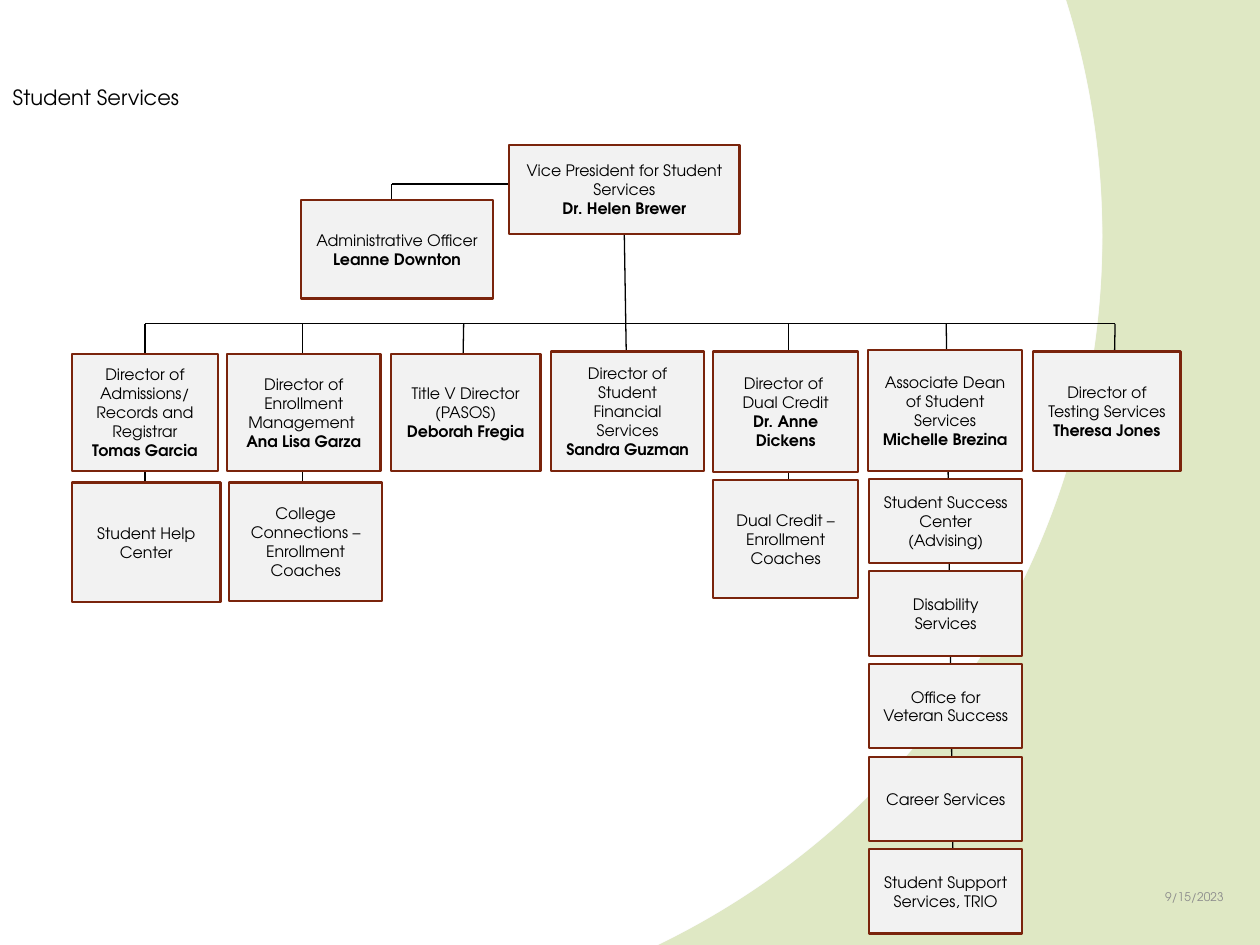
from pptx import Presentation
from pptx.dml.color import RGBColor
from pptx.enum.shapes import MSO_CONNECTOR as Connector, MSO_SHAPE as Shape
from pptx.enum.text import MSO_ANCHOR as Anchor, MSO_AUTO_SIZE as AutoSize, PP_ALIGN as Align
from pptx.oxml import parse_xml
from pptx.oxml.ns import nsdecls, qn
from pptx.util import Inches, Pt

FONT = "TeX Gyre Adventor"
BLACK, GREY, BOX_FILL, BOX_LINE = "000000", "8C8C8C", "F2F2F2", "7A240C"
BUS_Y = 2.57
UNIT_PITCH = 0.735

# line from the bus down behind the boxes; director's box; role; name;
# box of the first unit; units
DEPARTMENTS = [
    ((1.15, BUS_Y, 1.15, 4.38), (0.57, 2.81, 1.16, 0.93),
     "Director of Admissions/ Records and Registrar", "Tomas Garcia",
     (0.57, 3.83, 1.18, 0.95), ["Student Help Center"]),
    ((2.4, BUS_Y, 2.4, 4.37), (1.8, 2.81, 1.22, 0.93),
     "Director of Enrollment Management ", "Ana Lisa Garza",
     (1.82, 3.83, 1.21, 0.94), ["College Connections – Enrollment Coaches"]),
    ((3.68, BUS_Y, 3.66, 3.68), (3.1, 2.81, 1.19, 0.93),
     "Title V Director (PASOS)", "Deborah Fregia", None, []),
    ((4.95, 1.57, 4.98, 3.39), (4.37, 2.79, 1.22, 0.95),
     "Director of Student Financial Services", "Sandra Guzman", None, []),
    ((6.26, BUS_Y, 6.26, 4.35), (5.66, 2.79, 1.15, 0.96),
     "Director of \nDual Credit", "Dr. Anne Dickens",
     (5.66, 3.81, 1.15, 0.94), ["Dual Credit – Enrollment Coaches"]),
    ((7.51, BUS_Y, 7.57, 7.31), (6.89, 2.78, 1.22, 0.96),
     "Associate Dean of Student Services", "Michelle Brezina",
     (6.9, 3.8, 1.21, 0.67),
     ["Student Success Center (Advising)", "Disability Services",
      "Office for Veteran Success", "Career Services",
      "Student Support Services, TRIO"]),
    ((8.85, BUS_Y, 8.83, 3.67), (8.2, 2.79, 1.17, 0.95),
     "Director of Testing Services", "Theresa Jones", None, []),
]


def color(value):
    return RGBColor.from_string(value)


def write(frame, text, name=None, size=9, fill=BLACK, align=Align.CENTER,
          anchor=Anchor.MIDDLE, wrap=True):
    """Write the lines of text, then an optional name in bold."""
    frame.word_wrap = wrap
    frame.vertical_anchor = anchor
    lines = [(line, False) for line in text.split("\n")]
    if name:
        lines.append((name, True))
    for index, (line, bold) in enumerate(lines):
        paragraph = frame.add_paragraph() if index else frame.paragraphs[0]
        paragraph.alignment = align
        run = paragraph.add_run()
        run.text = line
        run.font.name, run.font.size, run.font.bold = FONT, Pt(size), bold
        run.font.color.rgb = color(fill)


def add_box(slide, box, text, name=None):
    shape = slide.shapes.add_shape(Shape.RECTANGLE, *map(Inches, box))
    shape.shadow.inherit = False
    shape.fill.solid()
    shape.fill.fore_color.rgb = color(BOX_FILL)
    shape.line.color.rgb = color(BOX_LINE)
    shape.line.width = Pt(1.25)
    write(shape.text_frame, text, name)


def add_line(slide, ends):
    line = slide.shapes.add_connector(Connector.STRAIGHT, *map(Inches, ends))
    line.line.color.rgb = color(BLACK)
    line.line.width = Pt(0.75)
    line._element.spPr.append(line._element.makeelement(qn("a:effectLst"), {}))


def set_background(slide):
    """White disc centred a quarter of the way in, green outside it."""
    slide.background.fill.solid()
    properties = slide.background._cSld.bg.bgPr
    gradient = parse_xml(
        f'<a:gradFill {nsdecls("a")} rotWithShape="1"><a:gsLst>'
        '<a:gs pos="99900"><a:srgbClr val="FFFFFF"/></a:gs>'
        '<a:gs pos="100000"><a:srgbClr val="DFE8C4"/></a:gs></a:gsLst>'
        '<a:path path="circle"><a:fillToRect l="50000" t="50000" r="100000" b="100000"/>'
        '</a:path></a:gradFill>')
    properties.replace(properties.find(qn("a:solidFill")), gradient)


def add_title(slide, box):
    title = slide.shapes.title
    title.left, title.top, title.width, title.height = map(Inches, box)
    write(title.text_frame, "Student Services", size=12, align=Align.LEFT,
          anchor=Anchor.TOP, wrap=False)
    title.text_frame.auto_size = AutoSize.SHAPE_TO_FIT_TEXT


def add_date(slide, box):
    date = slide.shapes.add_textbox(*map(Inches, box))
    write(date.text_frame, "9/15/2023", size=6.8, fill=GREY, align=Align.RIGHT)


def add_leadership(slide, president_box, officer_box):
    """Draw both leaders and the bent line between them, behind the boxes."""
    corner_x, corner_y = 3.11, 1.46
    add_line(slide, (corner_x, officer_box[1] + 0.09, corner_x, corner_y))
    add_line(slide, (corner_x, corner_y, president_box[0] + 0.25, corner_y))
    add_box(slide, president_box, "Vice President for Student Services",
            "Dr. Helen Brewer")
    add_box(slide, officer_box, "Administrative Officer", "Leanne Downton")


def add_department(slide, box, role, name, unit_box, units):
    """Draw the director and stack the units below."""
    add_box(slide, box, role, name)
    for row, unit in enumerate(units):
        left, top, width, height = unit_box
        add_box(slide, (left, top + row * UNIT_PITCH, width, height), unit)


def main():
    presentation = Presentation()
    presentation.slide_width, presentation.slide_height = Inches(10), Inches(7.5)
    slide = presentation.slides.add_slide(presentation.slide_layouts[5])
    set_background(slide)
    add_title(slide, (0, 0.62, 1.53, 0.3))
    add_date(slide, (8.87, 6.91, 0.94, 0.41))
    drops = [department[0] for department in DEPARTMENTS]
    for drop in drops:
        add_line(slide, drop)
    add_line(slide, (drops[0][0], BUS_Y, drops[-1][0], BUS_Y))
    add_leadership(slide, (4.04, 1.15, 1.83, 0.71), (2.39, 1.59, 1.52, 0.78))
    for department in DEPARTMENTS:
        add_department(slide, *department[1:])
    presentation.save("out.pptx")


if __name__ == "__main__":
    main()
